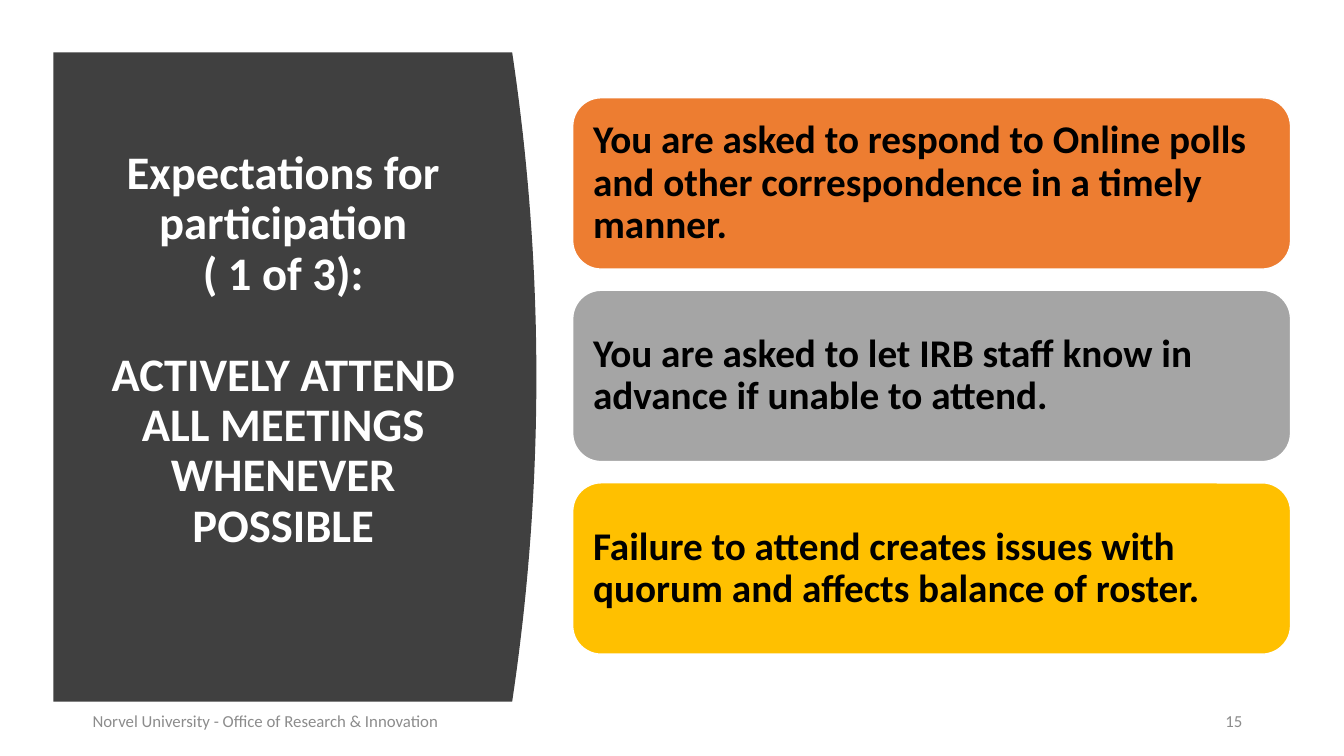
from pptx import Presentation
from pptx.dml.color import RGBColor
from pptx.enum.shapes import MSO_SHAPE as Shape
from pptx.enum.text import MSO_ANCHOR as Anchor, MSO_AUTO_SIZE as AutoSize, PP_ALIGN as Align
from pptx.util import Inches, Pt

WHITE = RGBColor(0xFF, 0xFF, 0xFF)
BLACK = RGBColor(0x00, 0x00, 0x00)
CHARCOAL = RGBColor(0x40, 0x40, 0x40)
FOOTER_GRAY = RGBColor(0x8C, 0x8C, 0x8C)
ORANGE = RGBColor(0xED, 0x7D, 0x31)
GRAY = RGBColor(0xA5, 0xA5, 0xA5)
GOLD = RGBColor(0xFF, 0xC0, 0x00)

TITLE = [
    "Expectations for participation\v( 1 of 3):",
    "ACTIVELY ATTEND ALL MEETINGS WHENEVER POSSIBLE",
]
EXPECTATIONS = [
    ("You are asked to respond to Online polls and other correspondence "
     "in a timely manner.", ORANGE),
    ("You are asked to let IRB staff know in advance if unable to attend.", GRAY),
    ("Failure to attend creates issues with quorum and affects balance of roster.", GOLD),
]


def format_paragraph(paragraph, size, color, bold=False, align=Align.LEFT, spacing=None):
    paragraph.alignment = align
    paragraph.line_spacing = spacing
    for run in paragraph.runs:
        run.font.name = "Calibri"
        run.font.size = Pt(size)
        run.font.bold = bold
        run.font.color.rgb = color


def add_curved_panel(slide, left, top, width, height, bulge=0.24, steps=40):
    """Dark panel whose right edge bows outward by the bulge."""
    edge = left + width - bulge
    curve = []
    for step in range(steps + 1):
        position = step / steps
        x = edge + bulge * (1 - (2 * position - 1) ** 2)
        curve.append((Inches(x), Inches(top + height * position)))
    builder = slide.shapes.build_freeform(Inches(left), Inches(top), scale=1.0)
    builder.add_line_segments(curve + [(Inches(left), Inches(top + height))], close=True)
    panel = builder.convert_to_shape()
    panel.shadow.inherit = False
    panel.fill.solid()
    panel.fill.fore_color.rgb = CHARCOAL
    panel.line.fill.background()


def place_title(slide, left, top, width, height):
    title = slide.shapes.title
    title.left, title.top = Inches(left), Inches(top)
    title.width, title.height = Inches(width), Inches(height)
    frame = title.text_frame
    frame.word_wrap = True
    frame.auto_size = AutoSize.NONE
    frame.vertical_anchor = Anchor.MIDDLE
    frame.text = TITLE[0]
    frame.add_paragraph().text = TITLE[1]
    for paragraph in frame.paragraphs:
        format_paragraph(paragraph, 33.3, WHITE, True, Align.CENTER, 0.9)
    frame.paragraphs[1].space_before = Pt(36)


def add_cards(slide, left, top, width, height, gap=0.21):
    """Stack of equal rounded cards filling the given box."""
    card_height = (height - gap * (len(EXPECTATIONS) - 1)) / len(EXPECTATIONS)
    for index, (text, color) in enumerate(EXPECTATIONS):
        card_top = top + index * (card_height + gap)
        card = slide.shapes.add_shape(
            Shape.ROUNDED_RECTANGLE, Inches(left), Inches(card_top),
            Inches(width), Inches(card_height))
        card.shadow.inherit = False
        card.fill.solid()
        card.fill.fore_color.rgb = color
        card.line.color.rgb = WHITE
        card.line.width = Pt(1)
        frame = card.text_frame
        frame.word_wrap = True
        frame.vertical_anchor = Anchor.MIDDLE
        # The rounded corners already inset the text by 0.08
        frame.margin_left = frame.margin_right = Inches(0.12)
        frame.margin_top = frame.margin_bottom = Inches(0.12)
        frame.text = text
        format_paragraph(frame.paragraphs[0], 28, BLACK, True, spacing=0.9)


def add_footer_text(slide, text, left, top, width, height, align):
    box = slide.shapes.add_textbox(Inches(left), Inches(top), Inches(width), Inches(height))
    frame = box.text_frame
    frame.word_wrap = True
    frame.vertical_anchor = Anchor.MIDDLE
    frame.text = text
    format_paragraph(frame.paragraphs[0], 12, FOOTER_GRAY, align=align)
    frame.paragraphs[0].space_after = Pt(6)


def add_expectations_slide(presentation):
    slide = presentation.slides.add_slide(presentation.slide_layouts[5])
    # Left panel, with the title brought in front of it
    add_curved_panel(slide, 0.53, 0.52, 4.79, 6.44)
    place_title(slide, 0.94, 1.11, 3.74, 4.74)
    title_element = slide.shapes.title.element
    title_element.getparent().append(title_element)
    # Footer
    add_footer_text(slide, "Norvel University - Office of Research & Innovation",
                    0.82, 6.95, 4.5, 0.4, Align.LEFT)
    add_footer_text(slide, "15", 11.73, 6.95, 0.69, 0.4, Align.RIGHT)
    # Right column
    add_cards(slide, 5.68, 0.97, 7.12, 5.52)


def main():
    presentation = Presentation()
    presentation.slide_width = Inches(13.33)
    presentation.slide_height = Inches(7.5)
    add_expectations_slide(presentation)
    presentation.save("out.pptx")


if __name__ == "__main__":
    main()
